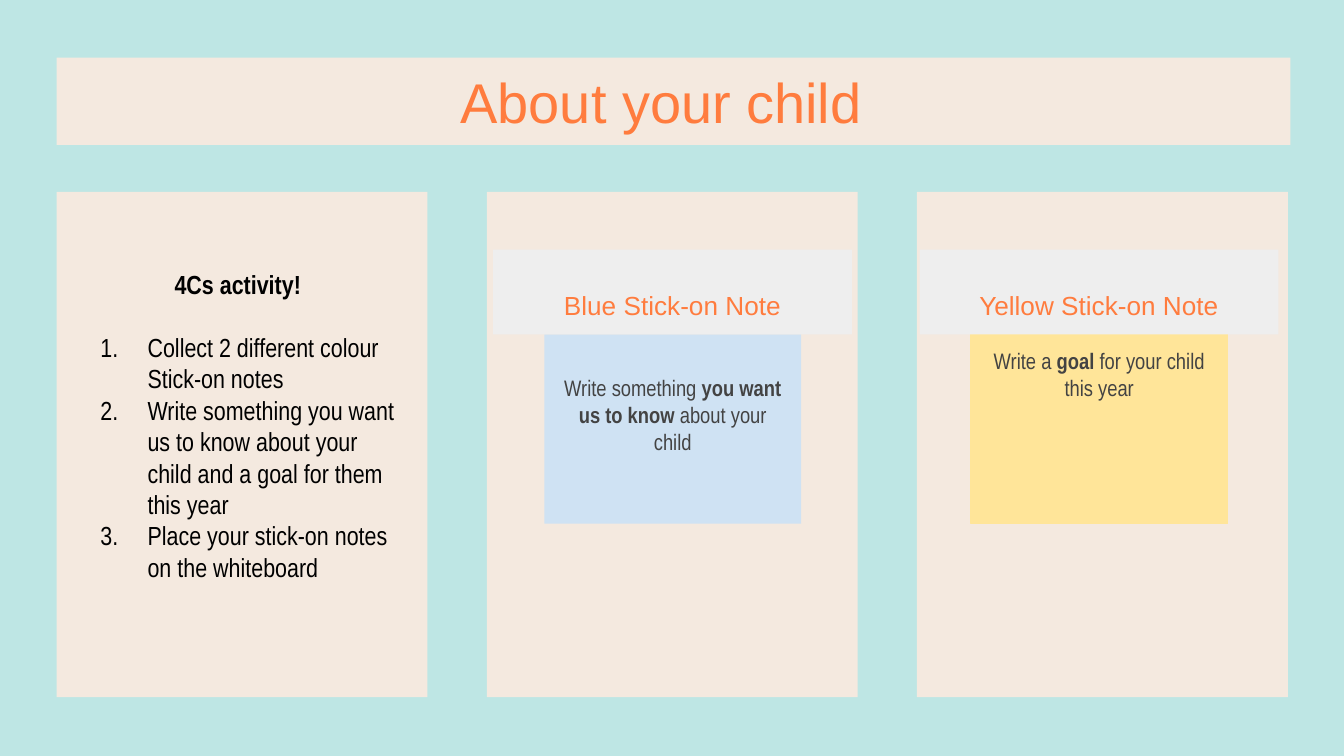
"""Build the "About your child" activity slide."""
import pptx
import pptx.dml.color
import pptx.enum.shapes
import pptx.enum.text
import pptx.oxml
import pptx.oxml.ns
import pptx.util

Cm = pptx.util.Cm
Pt = pptx.util.Pt
ALIGN = pptx.enum.text.PP_ALIGN
ANCHOR = pptx.enum.text.MSO_ANCHOR

TITLE = "About your child"
ACTIVITY = "4Cs activity!"
STEPS = [
    "Collect 2 different colour Stick-on notes",
    "Write something you want us to know about your child and a goal for them this year",
    "Place your stick-on notes on the whiteboard",
]
NOTES = [
    {
        "label": "Blue Stick-on Note",
        "spans": [("Write something ", False), ("you want us to know", True), (" about your child", False)],
        "fill": "CFE2F3", "line": None, "top_inset": 0.76,
    },
    {
        "label": "Yellow Stick-on Note",
        "spans": [("Write a ", False), ("goal", True), (" for your child this year", False)],
        "fill": "FFE599", "line": "FFE599", "top_inset": 0.25,
    },
]
SKY, CREAM, GREY, ORANGE, DARK, BLACK = "BEE6E4", "F4E9DF", "EEEEEE", "FF7C3E", "434343", "000000"
HEADING, BODY = "Arial", "Arial Narrow"
MARGIN, CARD_PITCH, NOTE_PITCH, INSET = 1.07, 8.13, 8.06, 0.25


def paint(target, color):
    """Give a fill a solid colour."""
    target.solid()
    target.fore_color.rgb = pptx.dml.color.RGBColor.from_string(color)


def add_panel(page, left, top, width, height, fill, line=None):
    """Add a flat rectangle measured in centimetres."""
    kind = pptx.enum.shapes.MSO_SHAPE.RECTANGLE
    panel = page.shapes.add_shape(kind, Cm(left), Cm(top), Cm(width), Cm(height))
    panel.shadow.inherit = False
    paint(panel.fill, fill)
    if line:
        paint(panel.line.fill, line)
        panel.line.width = Pt(0.75)
    else:
        panel.line.fill.background()
    return panel


def set_frame(box, anchor=ANCHOR.TOP, top_inset=INSET):
    """Set wrapping, insets and anchor of a text frame."""
    frame = box.text_frame
    frame.word_wrap = True
    frame.auto_size = pptx.enum.text.MSO_AUTO_SIZE.NONE
    frame.vertical_anchor = anchor
    frame.margin_left = frame.margin_right = frame.margin_bottom = Cm(INSET)
    frame.margin_top = Cm(top_inset)
    return frame


def write(para, text, size=14, font=BODY, color=BLACK, bold=False, align=ALIGN.CENTER):
    """Append a formatted span to a paragraph."""
    para.alignment = align
    span = para.add_run()
    span.text = text
    span.font.size = Pt(size)
    span.font.name = font
    span.font.bold = bold
    span.font.color.rgb = pptx.dml.color.RGBColor.from_string(color)


def number(para):
    """Turn a paragraph into a numbered item with a hanging indent."""
    settings = para._p.get_or_add_pPr()
    settings.set("marL", str(Cm(1.27)))
    settings.set("indent", str(-Cm(0.89)))
    namespace = pptx.oxml.ns.nsdecls("a")
    for markup in (
        f'<a:buClr {namespace}><a:srgbClr val="{BLACK}"/></a:buClr>',
        f'<a:buFont {namespace} typeface="{BODY}"/>',
        f'<a:buAutoNum {namespace} type="arabicPeriod"/>',
    ):
        settings.append(pptx.oxml.parse_xml(markup))


def add_title(page):
    """Place the title placeholder over its banner."""
    add_panel(page, MARGIN, 1.09, 23.32, 1.65, CREAM)
    title = page.shapes.title
    title.left, title.top, title.width, title.height = Cm(1.47), Cm(1.09), Cm(22.05), Cm(1.65)
    page.shapes._spTree.append(title._element)
    frame = set_frame(title, ANCHOR.MIDDLE)
    write(frame.paragraphs[0], TITLE, size=30, font=HEADING, color=ORANGE)


def add_notes(page):
    """Draw each coloured note with its label above."""
    for column, note in enumerate(NOTES):
        shift = column * NOTE_PITCH
        paper = add_panel(page, 10.29 + shift, 6.32, 4.85, 3.58, note["fill"], note["line"])
        para = set_frame(paper, top_inset=note["top_inset"]).paragraphs[0]
        for text, bold in note["spans"]:
            write(para, text, size=12, color=DARK, bold=bold)
        label = add_panel(page, 9.32 + shift, 4.72, 6.78, 1.6, GREY)
        para = set_frame(label, ANCHOR.BOTTOM).paragraphs[0]
        write(para, note["label"], font=HEADING, color=ORANGE)


def add_activity(page):
    """Write the activity heading and its numbered steps."""
    box = page.shapes.add_textbox(Cm(1.27), Cm(4.83), Cm(6.45), Cm(6.5))
    frame = set_frame(box)
    heading = frame.paragraphs[0]
    heading.space_after = Pt(16.8)
    write(heading, ACTIVITY, bold=True)
    for step in STEPS:
        para = frame.add_paragraph()
        number(para)
        write(para, step, align=ALIGN.LEFT)


def main():
    """Assemble and save the deck."""
    deck = pptx.Presentation()
    deck.slide_width, deck.slide_height = Cm(25.4), Cm(14.29)
    page = deck.slides.add_slide(deck.slide_layouts[5])
    paint(page.background.fill, SKY)
    add_title(page)
    for column in range(3):
        add_panel(page, MARGIN + column * CARD_PITCH, 3.63, 7.01, 9.55, CREAM)
    add_notes(page)
    add_activity(page)
    deck.save("out.pptx")


if __name__ == "__main__":
    main()
